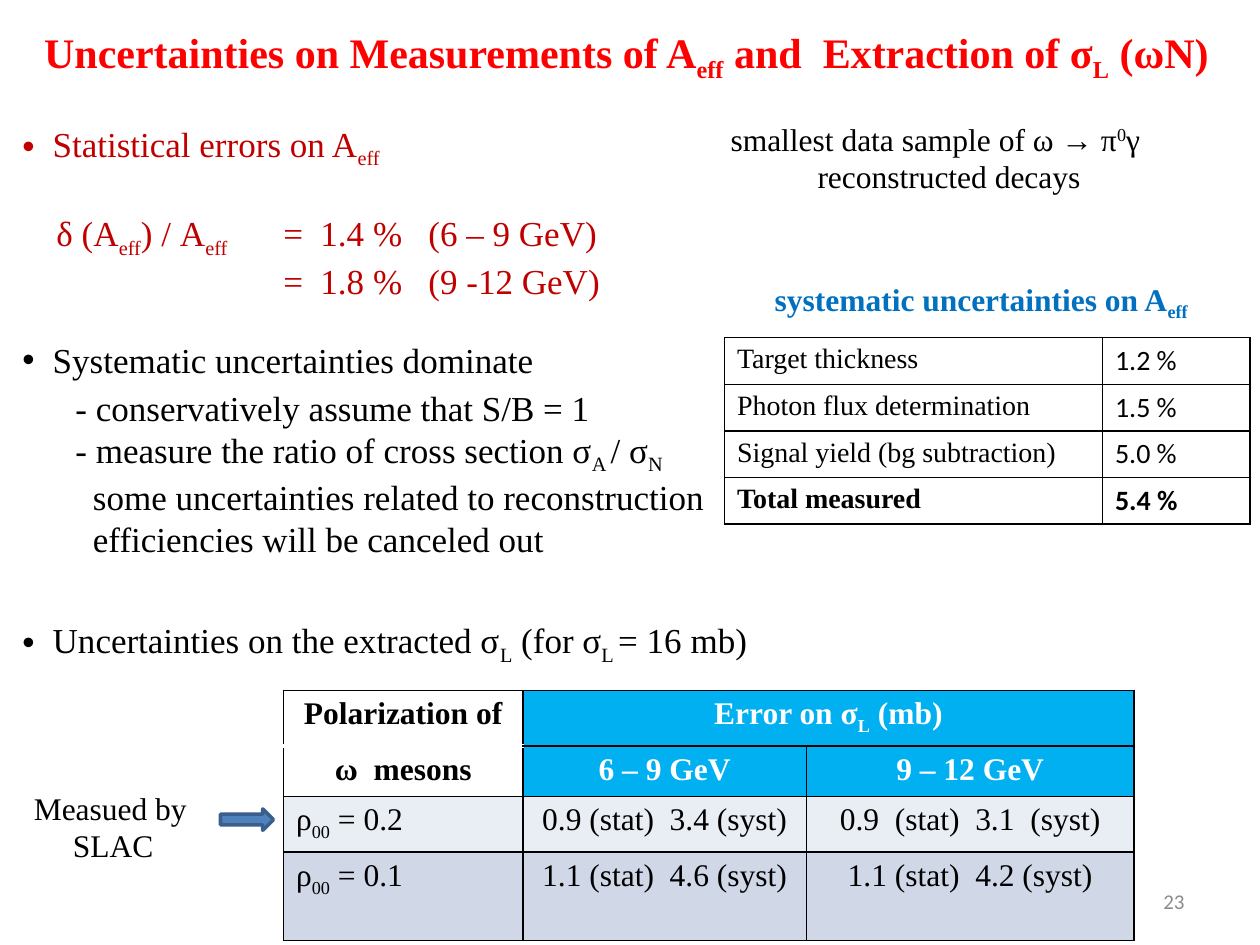
from lxml import etree
from pptx import Presentation
from pptx.dml.color import RGBColor
from pptx.enum.shapes import MSO_SHAPE
from pptx.enum.text import MSO_ANCHOR, PP_ALIGN
from pptx.oxml.ns import qn
from pptx.util import Inches, Pt

LEFT, CENTER, RIGHT = PP_ALIGN.LEFT, PP_ALIGN.CENTER, PP_ALIGN.RIGHT
TOP, MIDDLE = MSO_ANCHOR.TOP, MSO_ANCHOR.MIDDLE
ARROW = MSO_SHAPE.RIGHT_ARROW
SERIF, SANS = "Times New Roman", "Calibri"
COLORS = {
    "black": "000000", "white": "FFFFFF", "title": "FF0000", "stat": "C00000",
    "syst": "0070C0", "header": "00B0F0", "band": "E9EDF4", "band_dark": "D0D8E8",
    "arrow": "4F81BD", "arrow_line": "3A5F8C", "number": "8C8C8C",
}
BASELINES = {"_": "-25000", "^": "30000"}


def rgb(name):
    return RGBColor.from_string(COLORS[name])


def write(paragraph, text, size, color="black", bold=False, font=SERIF, align=LEFT):
    """Parts are split by |; a leading _ lowers a part and ^ raises it."""
    for part in text.split("|"):
        baseline = BASELINES.get(part[:1])
        run = paragraph.add_run()
        run.text = part[1:] if baseline else part
        if baseline:
            run.font._element.set("baseline", baseline)
    paragraph.alignment = align
    paragraph.font.name, paragraph.font.size = font, Pt(size)
    paragraph.font.bold, paragraph.font.color.rgb = bold, rgb(color)


def indent(paragraph, left, first=0.0, bullet=False):
    props = paragraph._p.get_or_add_pPr()
    props.set("marL", str(Inches(left)))
    props.set("indent", str(Inches(first)))
    if bullet:
        etree.SubElement(props, qn("a:buFont")).set("typeface", "Arial")
        etree.SubElement(props, qn("a:buChar")).set("char", "•")
        # The default run properties must come last
        props.append(props.find(qn("a:defRPr")))


def add_tab(paragraph, position):
    props = paragraph._p.get_or_add_pPr()
    tabs = etree.Element(qn("a:tabLst"))
    etree.SubElement(tabs, qn("a:tab"), pos=str(Inches(position)), algn="l")
    props.find(qn("a:defRPr")).addprevious(tabs)


def add_text(slide, box, lines, size, color="black", wrap=True, **style):
    """Each line is (text, left indent); returns the paragraphs."""
    frame = slide.shapes.add_textbox(*map(Inches, box)).text_frame
    frame.word_wrap = wrap
    for number, (text, left) in enumerate(lines):
        paragraph = frame.add_paragraph() if number else frame.paragraphs[0]
        write(paragraph, text, size, color, **style)
        if left:
            indent(paragraph, left)
    return frame.paragraphs


def add_bullet(slide, box, lines, color="black"):
    paragraphs = add_text(slide, box, lines, 20, color)
    indent(paragraphs[0], 0.24, -0.24, bullet=True)
    paragraphs[0].space_after = Pt(3)


def set_border(cell, side, color="black", width=1):
    props = cell._tc.get_or_add_tcPr()
    line = etree.Element(qn(f"a:ln{side}"), w=str(Pt(width)))
    fill = etree.SubElement(line, qn("a:solidFill"))
    etree.SubElement(fill, qn("a:srgbClr"), val=COLORS[color])
    # Borders come before the fill, in the order L, R, T, B
    props.insert(len([child for child in props if "}ln" in child.tag]), line)


def add_grid(slide, box, widths, heights):
    shape = slide.shapes.add_table(len(heights), len(widths), *map(Inches, box))
    table = shape.table
    table.first_row = table.horz_banding = False
    for column, width in zip(table.columns, widths):
        column.width = Inches(width)
    for row, height in zip(table.rows, heights):
        row.height = Inches(height)
    return table


def fill_cell(cell, fill, edges=None):
    cell.fill.solid()
    cell.fill.fore_color.rgb = rgb(fill)
    for side in "LRTB":
        set_border(cell, side, *(edges or {}).get(side, ()))


def add_title(slide, box):
    title = slide.shapes.title
    title.left, title.top, title.width, title.height = map(Inches, box)
    frame = title.text_frame
    frame.word_wrap, frame.vertical_anchor = False, TOP
    write(frame.paragraphs[0], "Uncertainties on Measurements of A|_eff| and  Extraction of σ|_L| (ωN)",
          24, "title", bold=True)


def add_statistical(slide, left, top):
    add_bullet(slide, (left, top, 4.83, 0.42), [("Statistical errors on A|_eff", 0)], "stat")
    ratios = add_text(slide, (left + 0.27, top + 0.71, 4.83, 0.77), [
        ("δ (A|_eff|) / A|_eff|\t=  1.4 %   (6 – 9 GeV)", 0),
        ("\t=  1.8 %   (9 -12 GeV)", 0),
    ], 20, "stat")
    for ratio in ratios:
        add_tab(ratio, 1.8)


def add_systematic(slide, left, top):
    add_bullet(slide, (left, top, 5.7, 1.75), [
        ("Systematic uncertainties dominate", 0),
        ("- conservatively assume that S/B = 1", 0.42),
        ("- measure the ratio of cross section σ|_A |/ σ|_N", 0.42),
        ("some uncertainties related to reconstruction", 0.56),
        ("efficiencies will be canceled out", 0.56),
    ])


def add_systematic_table(slide, left, top):
    add_text(slide, (left + 0.3, top - 0.51, 3.61, 0.4),
             [("systematic uncertainties on A|_eff", 0)], 18, "syst", wrap=False, bold=True)
    sources = [("Target thickness", "1.2 %"), ("Photon flux determination", "1.5 %"),
               ("Signal yield (bg subtraction)", "5.0 %"), ("Total measured", "5.4 %")]
    table = add_grid(slide, (left, top, 4.17, 1.47), (3, 1.17), [0.37] * len(sources))
    for row, texts in enumerate(sources):
        for column, (text, font) in enumerate(zip(texts, (SERIF, SANS))):
            cell = table.cell(row, column)
            fill_cell(cell, "white")
            write(cell.text_frame.paragraphs[0], text, 16, font=font, bold=row == len(sources) - 1)


def add_extraction(slide, left, top):
    add_bullet(slide, (left, top, 6.17, 0.42),
               [("Uncertainties on the extracted σ|_L| (for σ|_L |= 16 mb)", 0)])


def add_error_table(slide, left, top):
    rows = [
        ("Polarization of", "Error on σ|_L| (mb)", ""),
        ("ω  mesons", "6 – 9 GeV", "9 – 12 GeV"),
        ("ρ|_00| = 0.2", "0.9 (stat)  3.4 (syst)", "0.9  (stat)  3.1  (syst)"),
        ("ρ|_00| = 0.1", "1.1 (stat)  4.6 (syst)", "1.1 (stat)  4.2 (syst)"),
    ]
    fills = ("header", "header", "band", "band_dark")
    seams = ({"B": ("white", 3)}, {"T": ("white", 1)})
    table = add_grid(slide, (left, top, 6.75, 1.98), (1.9, 2.25, 2.6), (0.44, 0.4, 0.44, 0.7))
    table.cell(0, 1).merge(table.cell(0, 2))
    for row, texts in enumerate(rows):
        heading = row < 2
        for column, text in enumerate(texts):
            cell = table.cell(row, column)
            corner = heading and column == 0
            fill_cell(cell, "white" if corner else fills[row], seams[row] if corner else None)
            if text:
                write(cell.text_frame.paragraphs[0], text, 18,
                      "white" if heading and column else "black", bold=heading,
                      align=CENTER if heading or column else LEFT)


def add_measured_note(slide, left, top):
    add_text(slide, (left, top, 1.46, 0.71), [("Measued by", 0), ("SLAC", 0.31)], 18, wrap=False)
    arrow = slide.shapes.add_shape(
        ARROW, *map(Inches, (left + 1.58, top + 0.21, 0.42, 0.17)))
    arrow.shadow.inherit = False
    arrow.fill.solid()
    arrow.fill.fore_color.rgb = rgb("arrow")
    arrow.line.color.rgb, arrow.line.width = rgb("arrow_line"), Pt(2)


def add_sample_note(slide, left, top):
    add_text(slide, (left, top, 3.96, 0.71), [
        ("smallest data sample of ω → π|^0|γ", 0),
        ("reconstructed decays", 0.69),
    ], 18)


def add_slide_number(slide, left, top):
    number = slide.shapes.add_textbox(*map(Inches, (left, top, 2.33, 0.4)))
    number.text_frame.vertical_anchor = MIDDLE
    number.text_frame.word_wrap = True
    write(number.text_frame.paragraphs[0], "23", 12, "number", font=SANS, align=RIGHT)


def main():
    prs = Presentation()
    prs.slide_width, prs.slide_height = Inches(10), Inches(7.5)
    slide = prs.slides.add_slide(prs.slide_layouts[5])
    add_title(slide, (0.25, 0.16, 9.67, 0.5))
    # Left column of findings
    add_statistical(slide, 0.08, 0.92)
    add_systematic(slide, 0.08, 2.64)
    add_extraction(slide, 0.08, 4.86)
    # Right column
    add_sample_note(slide, 5.7, 0.9)
    add_systematic_table(slide, 5.75, 2.68)
    # Bottom results
    add_measured_note(slide, 0.17, 6.21)
    add_error_table(slide, 2.25, 5.48)
    add_slide_number(slide, 7.17, 6.95)
    prs.save("out.pptx")


if __name__ == "__main__":
    main()
